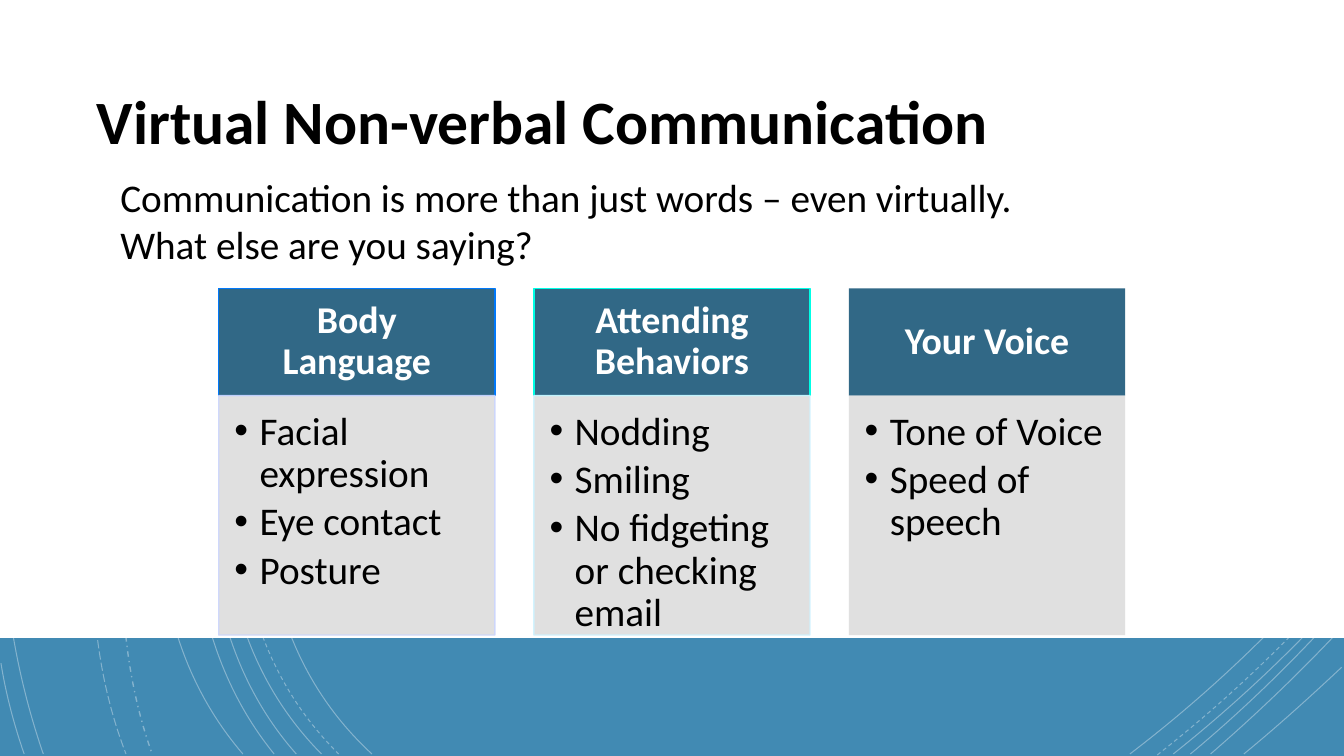
"""Build the slide on virtual non-verbal communication."""
from dataclasses import dataclass
from typing import NamedTuple

from lxml import etree
from pptx import Presentation, util as u
from pptx.dml.color import RGBColor
from pptx.enum import dml, shapes, text
from pptx.oxml.ns import qn

COLS, ROWS = 133.33, 75
CELL = u.Inches(0.1)
DASH = dml.MSO_LINE


@dataclass(frozen=True)
class Theme:
    font: str = "Calibri"
    band: str = "418AB3"
    white: str = "FFFFFF"
    black: str = "000000"
    head: str = "316886"
    body: str = "DDDDDD"
    title: float = 44
    text: float = 28
    label: float = 27
    edge: float = 1


class Box(NamedTuple):
    col: float
    row: float
    wide: float
    high: float


class Point(NamedTuple):
    col: float
    row: float


class Arc(NamedTuple):
    start: Point
    bend: Point
    turn: Point
    end: Point
    dash: DASH = DASH.SOLID
    width: float = 0.75


class Card(NamedTuple):
    label: str
    items: list[str]
    rim: str | None = None
    edge: str | None = None


THEME = Theme()
P = Point
ARCS = [
    Arc(P(56.5, 0), P(31.5, 11.5), P(14.3, 54), P(36.9, 74.8)),
    Arc(P(133.1, 6.2), P(127.8, 3.4), P(121.8, 1.6), P(116.2, 0.1)),
    Arc(P(112.1, 74.8), P(119.7, 69), P(126.9, 62.2), P(133.1, 54.8)),
    Arc(P(52.5, 0), P(28.5, 12.5), P(12.3, 53.7), P(33.6, 74.8), DASH.DASH),
    Arc(P(133.1, 4.1), P(129.7, 2.5), P(126, 1.2), P(122.5, 0.1), DASH.DASH),
    Arc(P(114.8, 74.9), P(121.3, 69.8), P(127.5, 64), P(133, 57.7), DASH.DASH),
    Arc(P(50.6, 0), P(27, 12.7), P(11, 53.7), P(31.9, 74.8)),
    Arc(P(133.1, 2.9), P(130.7, 1.9), P(128.3, 0.9), P(125.8, 0.1)),
    Arc(P(116.4, 74.8), P(122.3, 70.1), P(128, 64.8), P(133.1, 59.1)),
    Arc(P(46.4, 0), P(24.4, 13.3), P(11, 54.1), P(29.4, 74.8)),
    Arc(P(118.1, 74.8), P(123.4, 70.4), P(128.4, 65.5), P(133.1, 60.3)),
    Arc(P(45.1, 0), P(23.1, 13.8), P(9.7, 53.3), P(27.2, 74.8)),
    Arc(P(120.1, 74.8), P(124.6, 70.9), P(129, 66.7), P(133.1, 62.3)),
    Arc(P(42.7, 0), P(21.7, 14.7), P(5.3, 52.9), P(24.1, 74.8)),
    Arc(P(123.4, 74.8), P(126.7, 72.1), P(129.9, 69.2), P(133.1, 66.2)),
    Arc(P(36.3, 0), P(17.6, 16.6), P(6.5, 50.9), P(15.1, 74.8), DASH.DASH_DOT, 1),
    Arc(P(35.1, 0), P(15.7, 16.9), P(2.9, 49.9), P(12.5, 74.8), DASH.LONG_DASH),
    Arc(P(21.7, 0), P(1.1, 18.5), P(-4.6, 49), P(4.3, 74.8)),
    Arc(P(19.5, 0.1), P(9.2, 9.6), P(2.8, 21.4), P(0.2, 35.1)),
    Arc(P(0.1, 65.8), P(0.6, 68.9), P(1.4, 71.9), P(2.4, 74.8)),
    Arc(P(17.2, 0), P(10, 6.9), P(3.7, 15), P(0.2, 24.4)),
]
CARDS = [
    Card("Body Language", ["Facial expression", "Eye contact", "Posture"],
         "0078FA", "CCD6FD"),
    Card("Attending Behaviors",
         ["Nodding", "Smiling", "No fidgeting or checking email"],
         "00FFE6", "CEF3FF"),
    Card("Your Voice", ["Tone of Voice", "Speed of speech"]),
]
HEAD = Box(21.7, 28.6, 27.4, 10.65)
BODY = Box(21.7, 39.25, 27.4, 23.75)
STRIDE = 31.26


def cells(count: float) -> int:
    return round(count * CELL)


def fade(shape, share: int) -> None:
    for tint in shape._element.spPr.iter(qn("a:srgbClr")):
        etree.SubElement(tint, qn("a:alpha"), val=str(share * 1000))


def stroke(shape, tint: str | None, width: float) -> None:
    if tint is None:
        shape.line.fill.background()
        return
    shape.line.color.rgb = RGBColor.from_string(tint)
    shape.line.width = u.Pt(width)


def block(slide, box: Box, fill: str, line: str | None = None):
    shape = slide.shapes.add_shape(shapes.MSO_SHAPE.RECTANGLE, *map(cells, box))
    shape.shadow.inherit = False
    shape.fill.solid()
    shape.fill.fore_color.rgb = RGBColor.from_string(fill)
    stroke(shape, line, THEME.edge)
    return shape


def curve(slide, arc: Arc) -> None:
    first, *rest = [tuple(map(cells, spot)) for spot in arc[:4]]
    pen = slide.shapes.build_freeform(*first)
    pen.add_line_segments(rest, close=False)
    shape = pen.convert_to_shape()
    lines = list(shape._element.spPr.iter(qn("a:lnTo")))
    bow = etree.SubElement(lines[0].getparent(), qn("a:cubicBezTo"))
    for line in lines:
        bow.append(line[0])
        line.getparent().remove(line)
    shape.shadow.inherit = False
    shape.fill.background()
    stroke(shape, THEME.white, arc.width)
    shape.line.dash_style = arc.dash
    fade(shape, 35)


def inset(frame, left: float, top: float, right: float, low: float) -> None:
    frame.word_wrap = True
    frame.margin_left, frame.margin_top = cells(left), cells(top)
    frame.margin_right, frame.margin_bottom = cells(right), cells(low)


def style(para, size: float, tint: str, bold: bool = False) -> None:
    for run in para.runs:
        run.font.name = THEME.font
        run.font.size = u.Pt(size)
        run.font.bold = bold
        run.font.color.rgb = RGBColor.from_string(tint)


def dot(para) -> None:
    props = para._p.get_or_add_pPr()
    props.set("marL", str(cells(2.5)))
    props.set("indent", str(cells(-2.5)))
    etree.SubElement(props, qn("a:buFont"), typeface="Arial")
    etree.SubElement(props, qn("a:buChar"), char="•")


def draw(slide, card: Card, shift: float) -> None:
    head = block(slide, HEAD._replace(col=HEAD.col + shift), THEME.head, card.rim)
    frame = head.text_frame
    inset(frame, 2.1, 1.2, 2.1, 1.2)
    frame.vertical_anchor = text.MSO_ANCHOR.MIDDLE
    frame.text = card.label
    para = frame.paragraphs[0]
    para.alignment = text.PP_ALIGN.CENTER
    para.line_spacing = 0.9
    style(para, THEME.label, THEME.white, True)

    body = block(slide, BODY._replace(col=BODY.col + shift), THEME.body, card.edge)
    fade(body, 90)
    frame = body.text_frame
    inset(frame, 1.56, 1.56, 2.1, 2.4)
    frame.vertical_anchor = text.MSO_ANCHOR.TOP
    frame.text = "\n".join(card.items)
    for para in frame.paragraphs:
        para.alignment = text.PP_ALIGN.LEFT
        para.line_spacing = 0.9
        para.space_after = u.Pt(0.15 * THEME.text)
        dot(para)
        style(para, THEME.text, THEME.black)


def write(slide, box: Box, words: str, size: float, bold: bool = False):
    frame = slide.shapes.add_textbox(*map(cells, box)).text_frame
    inset(frame, 1, 0.5, 1, 0.5)
    para = frame.paragraphs[0]
    para.text = words
    style(para, size, THEME.black, bold)
    return frame


def main() -> None:
    deck = Presentation()
    deck.slide_width, deck.slide_height = cells(COLS), cells(ROWS)
    slide = deck.slides.add_slide(deck.slide_layouts[6])
    block(slide, Box(0, 0, COLS, ROWS), THEME.band)
    for arc in ARCS:
        curve(slide, arc)
    block(slide, Box(0, 0, COLS, 63.3), THEME.white)
    for i, card in enumerate(CARDS):
        draw(slide, card, i * STRIDE)
    title = write(slide, Box(8.63, 5.1, 115, 14.5),
                  "Virtual Non-verbal Communication", THEME.title, True)
    title.vertical_anchor = text.MSO_ANCHOR.MIDDLE
    title.paragraphs[0].line_spacing = 0.9
    write(slide, Box(10.95, 16.7, 102.9, 10.4),
          "Communication is more than just words – even virtually.\n"
          "What else are you saying?", THEME.text)
    deck.save("out.pptx")


if __name__ == "__main__":
    main()
